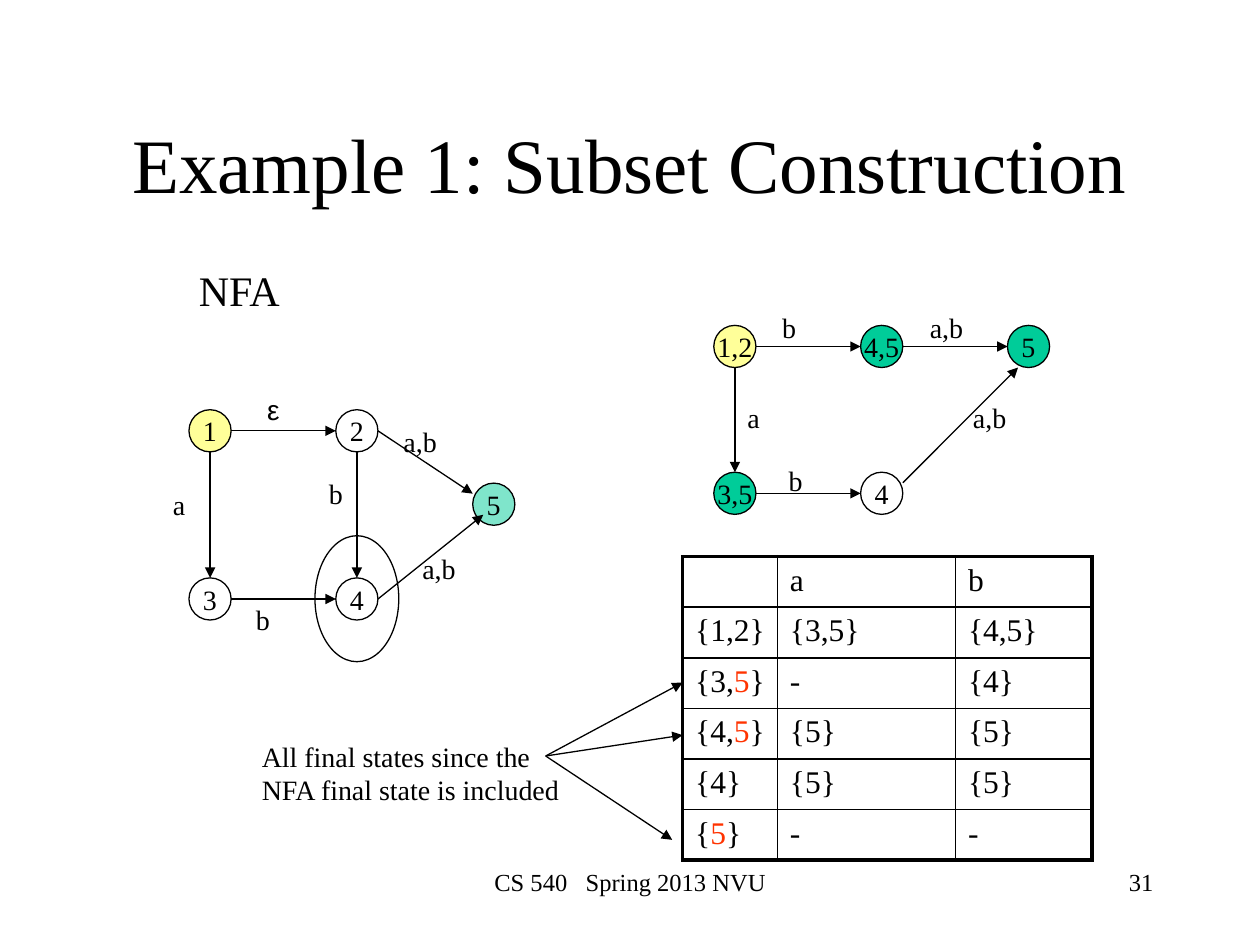
from lxml.etree import SubElement
from pptx import Presentation
from pptx.dml.color import RGBColor
from pptx.enum.shapes import MSO_CONNECTOR, MSO_SHAPE
from pptx.enum.text import MSO_ANCHOR, MSO_AUTO_SIZE, PP_ALIGN
from pptx.oxml import parse_xml
from pptx.oxml.ns import nsdecls, qn
from pptx.util import Cm, Pt

BLACK, WHITE, RED = "000000", "FFFFFF", "FF3300"
YELLOW, GREEN = "FFFF99", "00CC99"
SERIF = "Times New Roman"
SIZE = 0.85  # state diameter
STEP = 2.96  # distance between states
DROP = 3.39  # row distance in the NFA
LEFT, CENTER, RIGHT = PP_ALIGN.LEFT, PP_ALIGN.CENTER, PP_ALIGN.RIGHT


def color(code):
    return RGBColor.from_string(code)


def style(para, size, align=LEFT, face=SERIF):
    para.alignment = align
    para.font.size = Pt(size)
    para.font.name = face
    para.font.color.rgb = color(BLACK)


def write(slide, text, x, y, w, h, size=16, align=LEFT, face=SERIF, wrap=False):
    box = slide.shapes.add_textbox(Cm(x), Cm(y), Cm(w), Cm(h))
    frame = box.text_frame
    frame.text = text
    frame.word_wrap = wrap
    if not wrap:
        frame.auto_size = MSO_AUTO_SIZE.SHAPE_TO_FIT_TEXT
    for para in frame.paragraphs:
        style(para, size, align, face)
    return frame


def oval(slide, x, y, w, h, fill=None):
    shape = slide.shapes.add_shape(MSO_SHAPE.OVAL, Cm(x), Cm(y), Cm(w), Cm(h))
    shape.shadow.inherit = False
    if fill:
        shape.fill.solid()
        shape.fill.fore_color.rgb = color(fill)
    else:
        shape.fill.background()
    shape.line.color.rgb = color(BLACK)
    shape.line.width = Pt(0.75)
    return shape


def state(slide, text, x, y, fill):
    shape = oval(slide, x, y, SIZE, SIZE, fill)
    frame = shape.text_frame
    frame.text = text
    frame.word_wrap = False
    frame.vertical_anchor = MSO_ANCHOR.MIDDLE
    style(frame.paragraphs[0], 16, CENTER)
    return shape


def arrow(slide, start, end):
    line = slide.shapes.add_connector(
        MSO_CONNECTOR.STRAIGHT, *(Cm(v) for v in (*start, *end)))
    line.line.color.rgb = color(BLACK)
    line.line.width = Pt(0.75)
    SubElement(line.line._get_or_add_ln(), qn("a:tailEnd"), type="triangle")
    SubElement(line._element.spPr, qn("a:effectLst"))


def graph(slide, x, y, states, edges, labels):
    """States by name; edges join points given as fractions of a state."""
    shapes = {}
    for name, (dx, dy, fill) in states.items():
        shapes[name] = state(slide, name, x + dx, y + dy, fill)

    def point(name, fx, fy):
        dx, dy, _ = states[name]
        return x + dx + fx * SIZE, y + dy + fy * SIZE

    for start, end in edges:
        arrow(slide, point(*start), point(*end))
    for text, mid, top in labels:
        w = 0.78 if len(text) == 1 else 1.2
        face = "Arial" if text == "ε" else SERIF
        write(slide, text, x + mid - w / 2, y + top, w, 0.94, 16, CENTER, face)
    return shapes


def across(one, two):
    return (one, 1, 0.5), (two, 0, 0.5)


def down(one, two):
    return (one, 0.5, 1), (two, 0.5, 0)


def nfa(slide, x, y):
    write(slide, "NFA", x - 0.05, y - 3.05, 2.2, 1.27, 24)
    states = {
        "1": (0, 0, YELLOW),
        "5": (5.72, 1.48, GREEN),
        "2": (STEP, 0, WHITE),
        "4": (STEP, DROP, WHITE),
        "3": (0, DROP, WHITE),
    }
    edges = [across("1", "2"), down("2", "4"), down("1", "3"), across("3", "4"),
             (("4", 1, 0.5), ("5", 0.25, 0.75)),
             (("2", 1, 0.5), ("5", 0, 0.25))]
    labels = [("ε", 1.7, -0.48), ("b", 1.49, 3.76), ("a", -0.2, 1.45),
              ("b", 2.96, 1.22), ("a,b", 4.66, 0.18), ("a,b", 5.04, 2.74)]
    shapes = graph(slide, x, y, states, edges, labels)
    # Half-transparent final state
    tint = shapes["5"]._element.spPr.find(qn("a:solidFill"))[0]
    SubElement(tint, qn("a:alpha"), val="50000")
    # Ring around state 4
    oval(slide, x + 2.54, y + 2.54, 1.69, 2.54)


def dfa(slide, x, y):
    states = {
        "1,2": (0, 0, YELLOW),
        "4,5": (STEP, 0, GREEN),
        "5": (2 * STEP, 0, GREEN),
        "3,5": (0, STEP, GREEN),
        "4": (STEP, STEP, None),
    }
    edges = [across("1,2", "4,5"), across("4,5", "5"), down("1,2", "3,5"),
             across("3,5", "4"), (("4", 1, 0.25), ("5", 0.25, 1))]
    labels = [("a,b", 4.69, -0.42), ("a,b", 5.56, 1.39), ("b", 1.52, -0.42),
              ("a", 0.8, 1.39), ("b", 1.65, 2.66)]
    graph(slide, x, y, states, edges, labels)


def border(cell, edges):
    props = cell._tc.get_or_add_tcPr()
    for i, (side, outer) in enumerate(edges):
        width = Pt(2.25 if outer else 1)
        props.insert(i, parse_xml(
            f'<a:ln{side} {nsdecls("a")} w="{width}"><a:solidFill>'
            f'<a:srgbClr val="{BLACK}"/></a:solidFill></a:ln{side}>'))


def moves(slide, x, y):
    rows = [("", "a", "b"),
            ("{1,2}", "{3,5}", "{4,5}"),
            ("{3,5}", "-", "{4}"),
            ("{4,5}", "{5}", "{5}"),
            ("{4}", "{5}", "{5}"),
            ("{5}", "-", "-")]
    widths = (1.91, 3.59, 2.75)
    high = 1.02
    table = slide.shapes.add_table(
        len(rows), len(widths), Cm(x), Cm(y),
        Cm(sum(widths)), Cm(high * len(rows))).table
    table.first_row = table.horz_banding = False
    for col, w in zip(table.columns, widths):
        col.width = Cm(w)
    for r, row in enumerate(rows):
        table.rows[r].height = Cm(high)
        for c, text in enumerate(row):
            cell = table.cell(r, c)
            cell.fill.background()
            # Slim right margin keeps each set on one line
            cell.margin_right = Cm(0.1)
            border(cell, [("L", c == 0), ("R", c == len(widths) - 1),
                          ("T", r == 0), ("B", r == len(rows) - 1)])
            para = cell.text_frame.paragraphs[0]
            style(para, 18)
            # The NFA's final state is red in the first column
            parts = text.partition("5") if c == 0 else [text]
            for part in filter(None, parts):
                run = para.add_run()
                run.text = part
                if c == 0 and part == "5":
                    run.font.color.rgb = color(RED)


def note(slide, x, y):
    write(slide, "All final states since the\nNFA final state is included",
          x, y, 6.6, 1.63)
    for dx, dy in ((8.73, -1.02), (8.73, 0.04), (8.52, 2.15)):
        arrow(slide, (x + 5.97, y + 0.46), (x + dx, y + dy))


def title(slide, x, y, w, h):
    frame = write(slide, "Example 1: Subset Construction",
                  x, y, w, h, 44, CENTER, wrap=True)
    frame.vertical_anchor = MSO_ANCHOR.MIDDLE


def footer(slide, y):
    write(slide, "CS 540   Spring 2013 NVU", 8.68, y, 8.05, 1.27, 14, CENTER, wrap=True)
    write(slide, "31", 18.2, y, 5.3, 1.27, 14, RIGHT, wrap=True)


def main():
    deck = Presentation()
    deck.slide_width, deck.slide_height = Cm(25.4), Cm(19.05)
    slide = deck.slides.add_slide(deck.slide_layouts[6])
    footer(slide, 17.36)
    title(slide, 1.9, 1.7, 21.6, 3.18)
    nfa(slide, 3.81, 8.26)
    dfa(slide, 14.39, 6.56)
    moves(slide, 13.76, 11.22)
    note(slide, 5.03, 14.78)
    deck.save("out.pptx")


if __name__ == "__main__":
    main()
